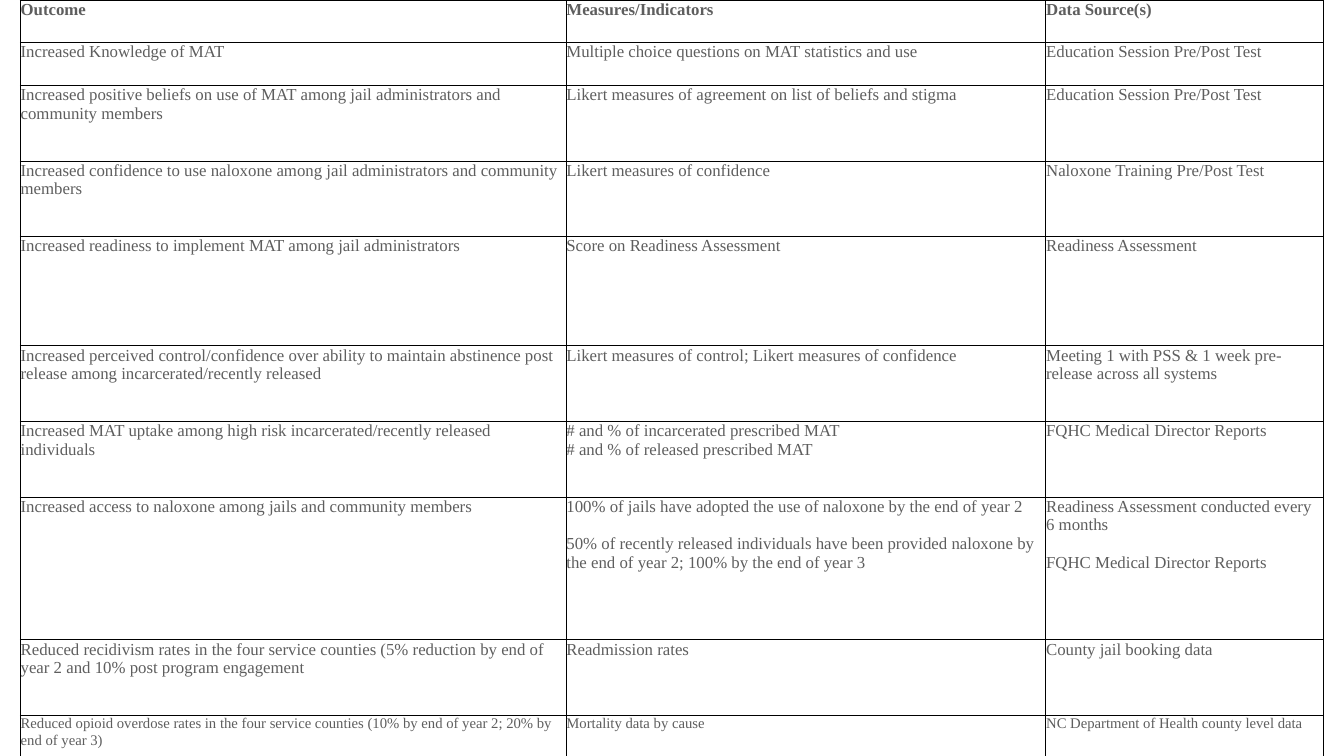
from lxml import etree
from pptx import Presentation
from pptx.dml.color import RGBColor
from pptx.enum.text import MSO_ANCHOR
from pptx.oxml.ns import qn
from pptx.util import Inches, Pt

TOP = MSO_ANCHOR.TOP
FONT = "Times New Roman"
TEXT_COLOR = "5E5E5E"
BORDER_COLOR = "000000"
BODY_SIZE, LAST_ROW_SIZE = 24, 21
ENTRY_GAP = 27  # points between separate entries in one cell

COLUMN_WIDTHS = [10.83, 9.52, 5.51]

# Row height, then outcome, measures and data sources.
# "\n" starts a new line, "\n\n" starts a separate entry.
ROWS = [
    (0.84, "Outcome", "Measures/Indicators", "Data Source(s)"),
    (0.85, "Increased Knowledge of MAT",
     "Multiple choice questions on MAT statistics and use",
     "Education Session Pre/Post Test"),
    (1.5, "Increased positive beliefs on use of MAT among jail administrators "
     "and community members",
     "Likert measures of agreement on list of beliefs and stigma",
     "Education Session Pre/Post Test"),
    (1.5, "Increased confidence to use naloxone among jail administrators "
     "and community members",
     "Likert measures of confidence",
     "Naloxone Training Pre/Post Test"),
    (2.17, "Increased readiness to implement MAT among jail administrators",
     "Score on Readiness Assessment",
     "Readiness Assessment"),
    (1.5, "Increased perceived control/confidence over ability to maintain "
     "abstinence post release among incarcerated/recently released",
     "Likert measures of control; Likert measures of confidence",
     "Meeting 1 with PSS & 1 week pre-release across all systems"),
    (1.5, "Increased MAT uptake among high risk incarcerated/recently "
     "released individuals",
     "# and % of incarcerated prescribed MAT\n"
     "# and % of released prescribed MAT",
     "FQHC Medical Director Reports"),
    (2.83, "Increased access to naloxone among jails and community members",
     "100% of jails have adopted the use of naloxone by the end of year 2\n\n"
     "50% of recently released individuals have been provided naloxone by "
     "the end of year 2; 100% by the end of year 3",
     "Readiness Assessment conducted every 6 months\n\n"
     "FQHC Medical Director Reports"),
    (1.5, "Reduced recidivism rates in the four service counties (5% reduction "
     "by end of year 2 and 10% post program engagement",
     "Readmission rates",
     "County jail booking data"),
    (0.81, "Reduced opioid overdose rates in the four service counties "
     "(10% by end of year 2; 20% by end of year 3)",
     "Mortality data by cause",
     "NC Department of Health county level data"),
]


def rgb(value):
    return RGBColor.from_string(value)


def add_borders(cell, color, width):
    properties = cell._tc.get_or_add_tcPr()
    for side in ("a:lnL", "a:lnR", "a:lnT", "a:lnB"):
        line = etree.SubElement(properties, qn(side), w=str(Pt(width)))
        fill = etree.SubElement(line, qn("a:solidFill"))
        etree.SubElement(fill, qn("a:srgbClr"), val=color)


def write_paragraph(paragraph, text, size, bold, gap):
    paragraph.text = text
    if gap:
        paragraph.space_before = Pt(gap)
    font = paragraph.font
    font.name, font.size, font.bold = FONT, Pt(size), bold
    font.color.rgb = rgb(TEXT_COLOR)


def fill_cell(cell, text, size, bold):
    add_borders(cell, BORDER_COLOR, 0.75)
    cell.fill.background()
    cell.vertical_anchor = TOP
    cell.margin_left = cell.margin_right = Inches(0.01)
    cell.margin_top = cell.margin_bottom = Inches(0.01)
    frame = cell.text_frame
    for entry_index, entry in enumerate(text.split("\n\n")):
        for line_index, line in enumerate(entry.split("\n")):
            first = entry_index == line_index == 0
            paragraph = frame.paragraphs[0] if first else frame.add_paragraph()
            gap = ENTRY_GAP if entry_index and not line_index else 0
            write_paragraph(paragraph, line, size, bold, gap)


def add_outcome_table(slide):
    table = slide.shapes.add_table(
        len(ROWS), len(COLUMN_WIDTHS), Inches(0.4), Inches(0),
        Inches(sum(COLUMN_WIDTHS)), Inches(15)).table
    table.horz_banding = False
    for column, width in zip(table.columns, COLUMN_WIDTHS):
        column.width = Inches(width)
    for index, (height, *texts) in enumerate(ROWS):
        row = table.rows[index]
        row.height = Inches(height)
        size = LAST_ROW_SIZE if index == len(ROWS) - 1 else BODY_SIZE
        for cell, text in zip(row.cells, texts):
            fill_cell(cell, text, size, bold=index == 0)


def main():
    deck = Presentation()
    deck.slide_width, deck.slide_height = Inches(26.67), Inches(15)
    slide = deck.slides.add_slide(deck.slide_layouts[6])
    # Evaluation plan: outcomes, measures and data sources
    add_outcome_table(slide)
    deck.save("out.pptx")


if __name__ == "__main__":
    main()
